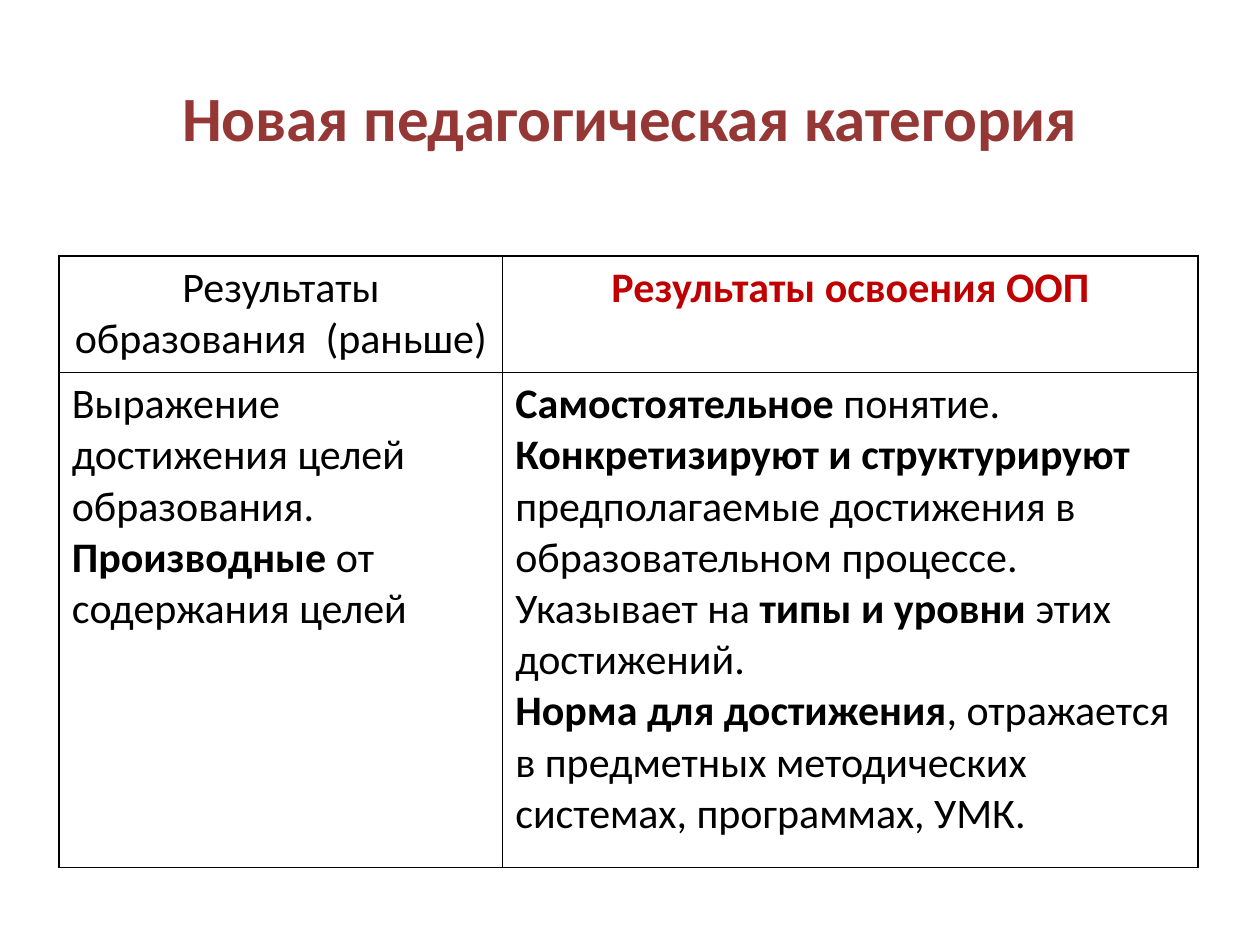
from dataclasses import dataclass

from lxml.etree import SubElement
from pptx import Presentation
from pptx.dml.color import RGBColor as RGB
from pptx.enum.text import MSO_ANCHOR as Anchor, PP_ALIGN as Align
from pptx.oxml.ns import qn
from pptx.util import Inches, Pt


@dataclass(frozen=True)
class Theme:
    """Colours, font and type sizes of the slide."""
    font: str = "Calibri"
    title_size: int = 36
    body_size: int = 24
    title: str = "953735"
    accent: str = "C00000"
    ink: str = "000000"
    border: int = 1


THEME = Theme()
WIDTH, HEIGHT = Inches(10), Inches(7.5)
COLUMNS = (0.352, 0.552)
ROWS = (0.123, 0.524)

TITLE = "Новая педагогическая категория"
HEADERS = (
    ("Результаты образования  (раньше)", False, THEME.ink),
    ("Результаты освоения ООП", True, THEME.accent),
)
BODIES = (
    (
        (("Выражение достижения целей образования.", False),),
        (("Производные", True), (" от содержания целей", False)),
    ),
    (
        (("Самостоятельное ", True), ("понятие.", False)),
        (("Конкретизируют и структурируют ", True),
         ("предполагаемые достижения в образовательном процессе.", False)),
        (("Указывает на ", False), ("типы и уровни ", True),
         ("этих достижений.", False)),
        (("Норма для достижения", True),
         (", отражается в предметных методических системах, программах, УМК.",
          False)),
    ),
)


def add_run(p, text, size, color, bold):
    """Append one styled run to a paragraph."""
    r = p.add_run()
    r.text = text
    r.font.name, r.font.size, r.font.bold = THEME.font, Pt(size), bold
    r.font.color.rgb = RGB.from_string(color)


def add_title(slide):
    """Add the centred heading."""
    sp = slide.shapes.add_textbox(
        int(WIDTH * 0.05), int(HEIGHT * 0.04), int(WIDTH * 0.9), int(HEIGHT / 6))
    tf = sp.text_frame
    tf.word_wrap = True
    tf.vertical_anchor = Anchor.MIDDLE
    p = tf.paragraphs[0]
    p.alignment = Align.CENTER
    add_run(p, TITLE, THEME.title_size, THEME.title, True)


def style_cell(cell):
    """Clear the cell's fill and draw its four borders."""
    props = cell._tc.get_or_add_tcPr()
    for side in ("lnL", "lnR", "lnT", "lnB"):
        line = SubElement(props, qn(f"a:{side}"), w=str(Pt(THEME.border)))
        fill = SubElement(line, qn("a:solidFill"))
        SubElement(fill, qn("a:srgbClr"), val=THEME.ink)
    cell.fill.background()


def fill_header(cell, text, bold, color):
    """Write a centred column heading."""
    p = cell.text_frame.paragraphs[0]
    p.alignment = Align.CENTER
    add_run(p, text, THEME.body_size, color, bold)


def fill_body(cell, paragraphs):
    """Write paragraphs of plain and bold runs."""
    tf = cell.text_frame
    for i, runs in enumerate(paragraphs):
        p = tf.add_paragraph() if i else tf.paragraphs[0]
        for text, bold in runs:
            add_run(p, text, THEME.body_size, THEME.ink, bold)


def add_comparison(slide):
    """Add the table comparing earlier and present results."""
    frame = slide.shapes.add_table(
        len(ROWS), len(COLUMNS), int(WIDTH * 0.047), int(HEIGHT * 0.271),
        int(WIDTH * sum(COLUMNS)), int(HEIGHT * sum(ROWS)))
    table = frame.table
    table.first_row = table.horz_banding = False
    for column, share in zip(table.columns, COLUMNS):
        column.width = int(WIDTH * share)
    for row, share in zip(table.rows, ROWS):
        row.height = int(HEIGHT * share)
    for cell in table.iter_cells():
        style_cell(cell)
    for i, (header, body) in enumerate(zip(HEADERS, BODIES)):
        fill_header(table.cell(0, i), *header)
        fill_body(table.cell(1, i), body)


def main():
    """Build and save the slide."""
    prs = Presentation()
    prs.slide_width, prs.slide_height = WIDTH, HEIGHT
    s = prs.slides.add_slide(prs.slide_layouts[6])
    add_title(s)
    add_comparison(s)
    prs.save("out.pptx")


if __name__ == "__main__":
    main()
